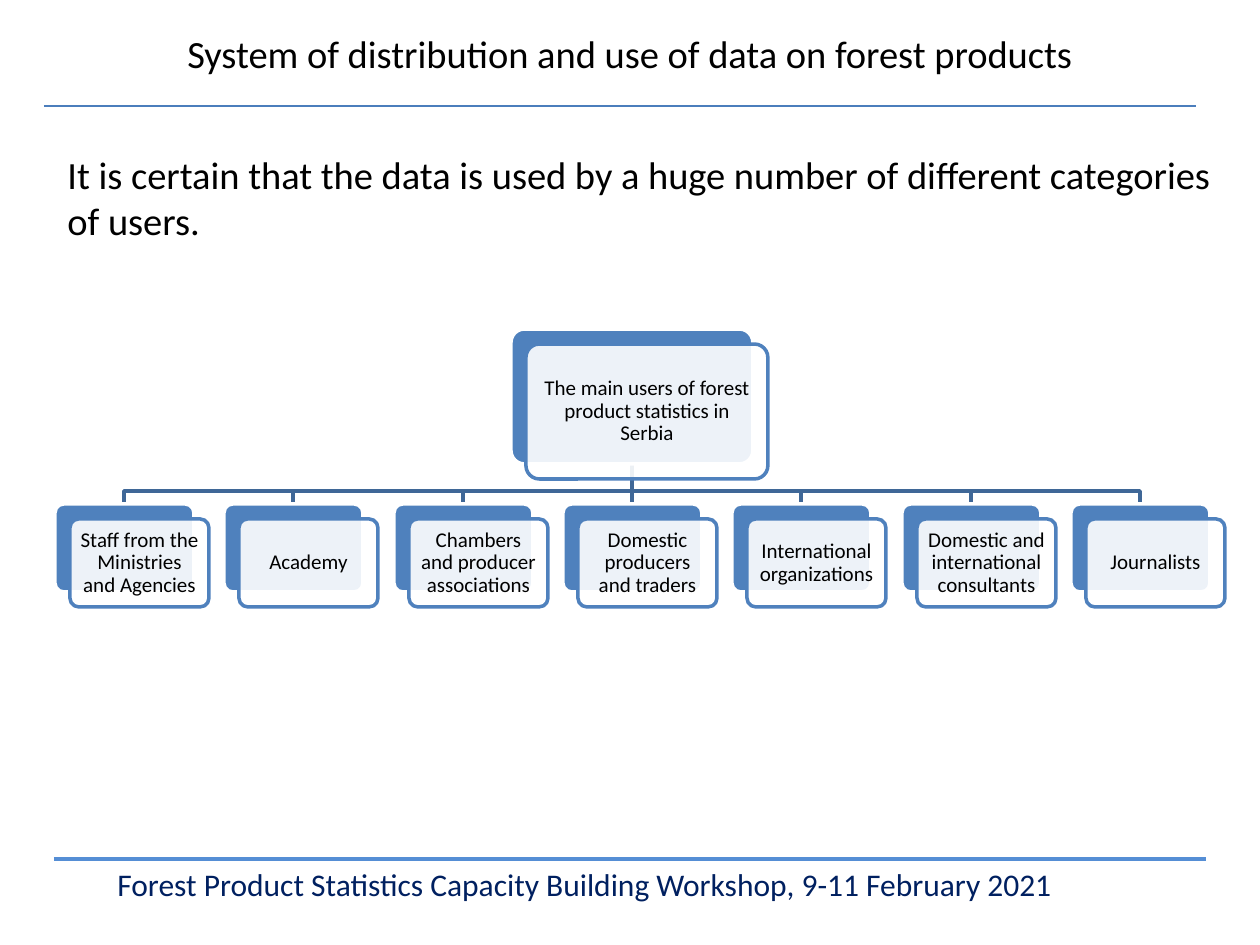
"""Build the slide on the users of forest product statistics."""
import pptx
import pptx.dml.color
import pptx.enum.shapes
import pptx.enum.text
import pptx.oxml.ns
import pptx.util
from lxml import etree

SCALE = 914400 / 126
FONT = "Calibri"
BLUE, DARK, WHITE = "4F81BD", "3F6797", "FFFFFF"
USERS = [
    "Staff from the Ministries and Agencies",
    "Academy",
    "Chambers and producer associations",
    "Domestic producers and traders",
    "International organizations",
    "Domestic and international consultants",
    "Journalists",
]
ROOT = (511, 329, 242, 135)
LEFT, TOP, WIDE, HIGH = 55, 504, 139, 88
SPAN = 1016
BAR = 491
SHIFT = 15


def px(num):
    return pptx.util.Emu(round(num * SCALE))


def color(code):
    return pptx.dml.color.RGBColor.from_string(code)


def add_tag(node, name, **attrs):
    return etree.SubElement(node, pptx.oxml.ns.qn(name), **attrs)


def add_text(slide, box, text, size=12, ink="000000", center=False,
             middle=False, inset=None, lead=None):
    frame = slide.shapes.add_textbox(*map(px, box)).text_frame
    frame.word_wrap = True
    if middle:
        frame.vertical_anchor = pptx.enum.text.MSO_ANCHOR.MIDDLE
    if inset is not None:
        frame.margin_left = frame.margin_right = px(inset)
        frame.margin_top = frame.margin_bottom = px(inset)
    para = frame.paragraphs[0]
    if center:
        para.alignment = pptx.enum.text.PP_ALIGN.CENTER
    if lead:
        para.line_spacing = lead
    run = para.add_run()
    run.text = text
    run.font.name = FONT
    run.font.size = pptx.util.Pt(size)
    run.font.color.rgb = color(ink)


def add_line(slide, start, end, ink, width):
    kind = pptx.enum.shapes.MSO_CONNECTOR.STRAIGHT
    line = slide.shapes.add_connector(kind, *map(px, start + end))
    line.line.color.rgb = color(ink)
    line.line.width = pptx.util.Pt(width)
    add_tag(line._element.spPr, "a:effectLst")


def add_elbow(slide, points):
    first, *rest = [tuple(map(px, point)) for point in points]
    build = slide.shapes.build_freeform(*first)
    build.add_line_segments(rest, close=False)
    shape = build.convert_to_shape()
    shape.shadow.inherit = False
    shape.fill.background()
    shape.line.color.rgb = color(DARK)
    shape.line.width = pptx.util.Pt(2)


def add_panel(slide, box, fill, edge, alpha=None):
    kind = pptx.enum.shapes.MSO_SHAPE.ROUNDED_RECTANGLE
    shape = slide.shapes.add_shape(kind, *map(px, box))
    shape.adjustments[0] = 0.1
    shape.shadow.inherit = False
    shape.fill.solid()
    shape.fill.fore_color.rgb = color(fill)
    shape.line.color.rgb = color(edge)
    shape.line.width = pptx.util.Pt(2)
    if alpha:
        tint = shape._element.spPr.find(".//" + pptx.oxml.ns.qn("a:srgbClr"))
        add_tag(tint, "a:alpha", val=str(alpha * 1000))


def add_card(slide, box, text, pad):
    left, top, wide, high = box
    left_in, top_in = left + SHIFT, top + SHIFT
    add_panel(slide, box, BLUE, WHITE)
    add_panel(slide, (left_in, top_in, wide, high), WHITE, BLUE, alpha=90)
    inner = (left_in + pad, top_in + pad, wide - 2 * pad, high - 2 * pad)
    add_text(slide, inner, text, center=True, middle=True, inset=6, lead=0.9)


def add_chart(slide):
    left, top, wide, high = ROOT
    mid, base = left + wide // 2, top + high
    boxes = [(LEFT + round(i * SPAN / (len(USERS) - 1)), TOP, WIDE, HIGH)
             for i in range(len(USERS))]
    for box in boxes:
        end = box[0] + WIDE // 2
        if end == mid:
            add_line(slide, (mid, base), (mid, TOP), DARK, 2)
        else:
            add_elbow(slide, [(mid, base), (mid, BAR), (end, BAR), (end, TOP)])
    add_card(slide, ROOT, "The main users of forest product statistics in Serbia", 4)
    for box, user in zip(boxes, USERS):
        add_card(slide, box, user, 3)


def main():
    deck = pptx.Presentation()
    deck.slide_width, deck.slide_height = px(1260), px(945)
    slide = deck.slides.add_slide(deck.slide_layouts[6])
    add_line(slide, (54, 859), (1206, 859), "558ED5", 2.25)
    add_text(slide, (105, 859, 1071, 50),
             "Forest Product Statistics Capacity Building Workshop, 9-11 February 2021",
             size=18, ink="002060")
    add_text(slide, (63, 0, 1134, 106),
             "System of distribution and use of data on forest products",
             size=22, center=True, middle=True)
    add_chart(slide)
    add_text(slide, (55, 145, 1203, 106),
             "It is certain that the data is used by a huge number of "
             "different categories of users.", size=22)
    add_line(slide, (44, 106), (1196, 106), "4B7EBC", 0.75)
    deck.save("out.pptx")


if __name__ == "__main__":
    main()
